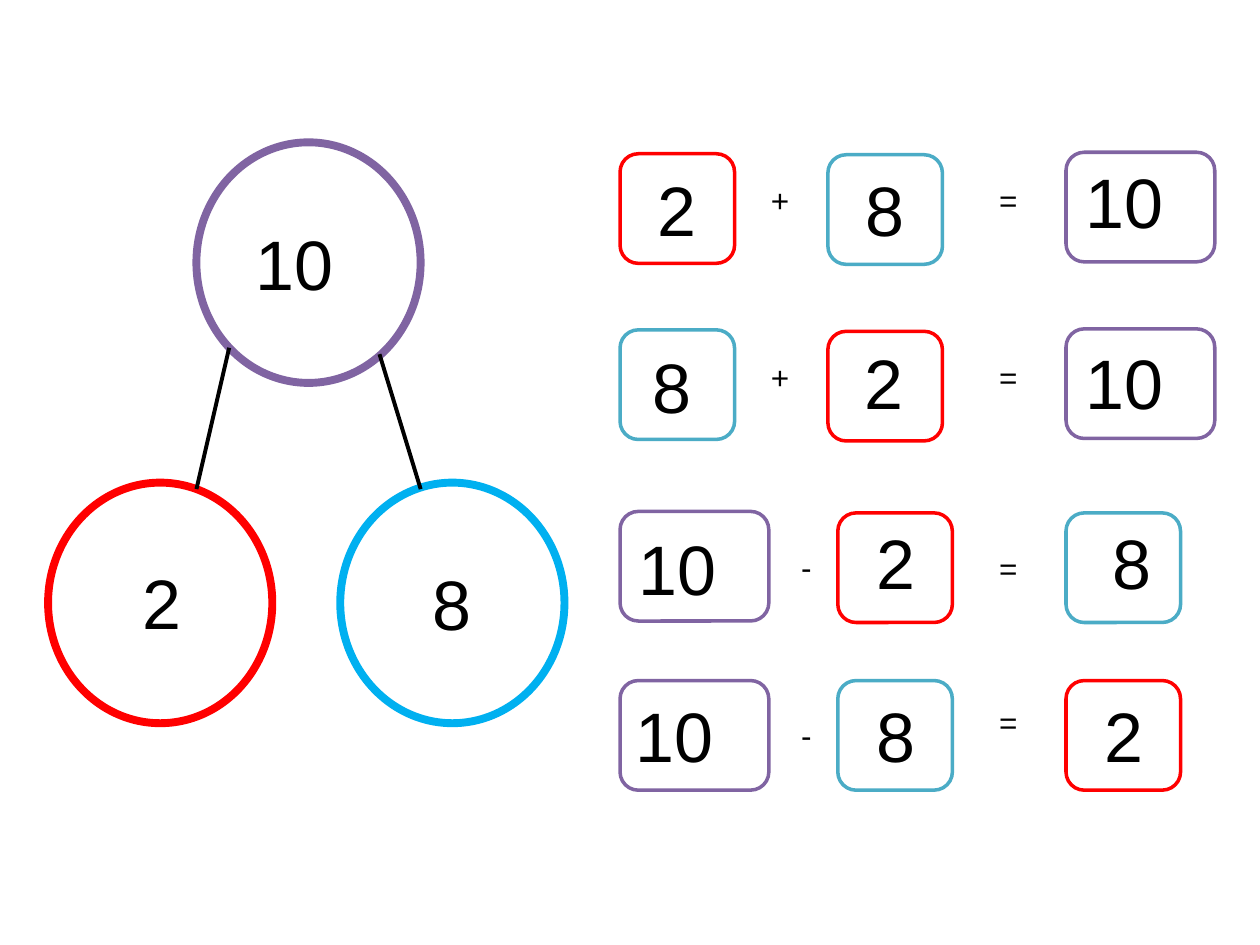
from lxml import etree
from pptx import Presentation, util as u
from pptx.dml.color import RGBColor
from pptx.enum import shapes, text
from pptx.oxml.ns import qn

color = RGBColor.from_string
NUMBER_COLORS = {"2": "FF0000", "8": "4BACC6", "10": "8064A2"}

presentation = Presentation()
presentation.slide_width, presentation.slide_height = u.Cm(25.4), u.Cm(19.05)
slide = presentation.slides.add_slide(presentation.slide_layouts[6])


def add_outline(container, preset, position, line_color, line_width):
    shape = container.add_shape(preset, *map(u.Cm, position))
    shape.shadow.inherit = False
    shape.line.color.rgb = color(line_color)
    shape.line.width = u.Pt(line_width)
    return shape


def add_text(content, left, top, width, height, size):
    box = slide.shapes.add_textbox(*map(u.Cm, (left, top, width, height)))
    frame_format = {"word_wrap": True, "auto_size": text.MSO_AUTO_SIZE.SHAPE_TO_FIT_TEXT}
    for name, value in frame_format.items():
        setattr(box.text_frame, name, value)
    paragraph = box.text_frame.paragraphs[0]
    paragraph.alignment = text.PP_ALIGN.CENTER if content in ("2", "8") else text.PP_ALIGN.LEFT
    run = paragraph.add_run()
    run.text = content
    for name, value in {"name": "Arial", "size": u.Pt(size)}.items():
        setattr(run.font, name, value)
    run.font.color.rgb = color("000000")


# Number bond: circles and the lines between them
bond = slide.shapes.add_group_shape()
circles = [
    # number, circle left and top, number left and top, colour
    ("2", 0.97, 9.73, 1.9, 11.15, "FF0000"),
    ("8", 6.86, 9.73, 7.75, 11.18, "00B0F0"),
    ("10", 3.96, 2.87, 4.9, 4.32, "8064A2"),
]
for number, left, top, text_left, text_top, line_color in circles:
    circle = add_outline(bond.shapes, shapes.MSO_SHAPE.OVAL,
                         (left, top, 4.52, 4.85), line_color, 4.5)
    circle.fill.background()
    add_text(number, text_left, text_top, 2.74, 1.96, 40)

for ends in [(4.62, 7.01, 3.96, 9.86), (7.65, 7.14, 8.48, 9.86)]:
    connector = bond.shapes.add_connector(shapes.MSO_CONNECTOR.STRAIGHT, *map(u.Cm, ends))
    connector.line.color.rgb = color("000000")
    connector.line.width = u.Pt(2.25)
    etree.SubElement(connector._element.spPr, qn("a:effectLst"))

# Equations: boxes as (number, box left, box top, number left, number top),
# signs as (sign, left, top)
equations = [
    ([("2", 12.5, 3.1, 12.27, 3.23), ("8", 16.69, 3.12, 16.48, 3.23),
      ("10", 21.49, 3.07, 21.64, 3.07)],
     [("+", 15.29, 3.53), ("=", 19.89, 3.53)]),
    ([("8", 12.5, 6.65, 12.17, 6.81), ("2", 16.69, 6.68, 16.46, 6.73),
      ("10", 21.49, 6.63, 21.64, 6.73)],
     [("+", 15.29, 7.09), ("=", 19.89, 7.09)]),
    ([("10", 12.5, 10.31, 12.62, 10.46), ("2", 16.89, 10.34, 16.69, 10.34),
      ("8", 21.49, 10.34, 21.44, 10.34)],
     [("-", 15.9, 10.92), ("=", 19.89, 10.95)]),
    ([("10", 12.5, 13.72, 12.57, 13.84), ("8", 16.89, 13.72, 16.69, 13.84),
      ("2", 21.49, 13.72, 21.29, 13.84)],
     [("-", 15.9, 14.3), ("=", 19.89, 14.05)]),
]
for numbers, signs in equations:
    for number, left, top, text_left, text_top in numbers:
        width = 3 if number == "10" else 2.31
        box = add_outline(slide.shapes, shapes.MSO_SHAPE.ROUNDED_RECTANGLE,
                          (left, top, width, 2.21), NUMBER_COLORS[number], 2)
        box.fill.solid()
        box.fill.fore_color.rgb = color("FFFFFF")
        add_text(number, text_left, text_top, 2.74, 1.96, 40)
    for sign, left, top in signs:
        add_text(sign, left, top, 0.99, 1.02, 18)

presentation.save("out.pptx")
